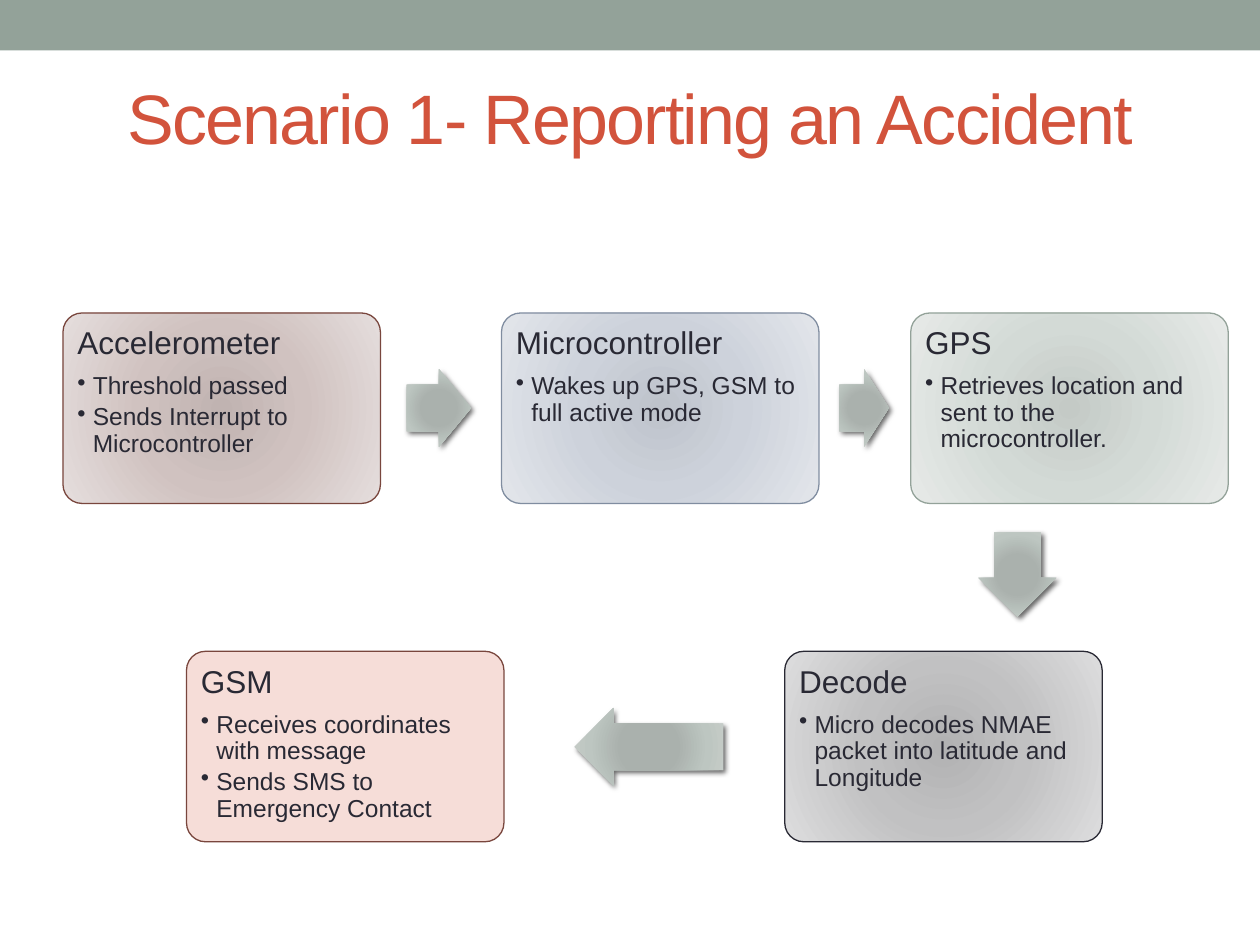
"""Builds a slide with a five-step flow for reporting an accident."""
from lxml import etree
from pptx import Presentation
from pptx import util as u
from pptx.dml.color import RGBColor
from pptx.enum import shapes, text
from pptx.oxml import ns

SAGE = RGBColor(0x93, 0xA2, 0x99)
RED = RGBColor(0xD2, 0x53, 0x3C)
INK = RGBColor(0x29, 0x29, 0x34)
BROWN = RGBColor(0x79, 0x46, 0x3D)
BLUE = RGBColor(0x80, 0x8D, 0xA0)
PINK = RGBColor(0xF6, 0xDD, 0xD8)
ROSES = [RGBColor(0xC0, 0xB3, 0xB1), RGBColor(0xD0, 0xC2, 0xC0), RGBColor(0xE5, 0xDE, 0xDD)]
BLUES = [RGBColor(0xBE, 0xC3, 0xCB), RGBColor(0xCD, 0xD2, 0xDB), RGBColor(0xE3, 0xE6, 0xEB)]
SAGES = [RGBColor(0xC4, 0xCA, 0xC6), RGBColor(0xD3, 0xDA, 0xD6), RGBColor(0xE7, 0xEA, 0xE8)]
GREYS = [RGBColor(0xB2, 0xB2, 0xB3), RGBColor(0xC1, 0xC1, 0xC2), RGBColor(0xDD, 0xDD, 0xDE)]
STEELS = [RGBColor(0xAA, 0xB2, 0xAD), RGBColor(0xAA, 0xB1, 0xAD),
          RGBColor(0xBD, 0xC6, 0xC1), RGBColor(0xC8, 0xCE, 0xCA)]


def glow(shape, hues, stops):
    shape.fill.solid()
    old = shape._element.spPr.find(ns.qn("a:solidFill"))
    grad = etree.Element(ns.qn("a:gradFill"), rotWithShape="1")
    row = etree.SubElement(grad, ns.qn("a:gsLst"))
    for hue, stop in zip(hues, stops):
        mark = etree.SubElement(row, ns.qn("a:gs"), pos=str(stop * 1000))
        etree.SubElement(mark, ns.qn("a:srgbClr"), val=str(hue))
    ring = etree.SubElement(grad, ns.qn("a:path"), path="circle")
    etree.SubElement(ring, ns.qn("a:fillToRect"), dict.fromkeys("ltrb", "100000"))
    old.getparent().replace(old, grad)


def write(para, words, size, hue):
    run = para.add_run()
    run.text = words
    run.font.name = "Arial"
    run.font.size = u.Pt(size)
    run.font.color.rgb = hue
    return run


deck = Presentation()
deck.slide_width, deck.slide_height = u.Cm(25.4), u.Cm(19.05)
slide = deck.slides.add_slide(deck.slide_layouts[6])

band = slide.shapes.add_shape(shapes.MSO_SHAPE.RECTANGLE, 0, 0, deck.slide_width, u.Cm(1.02))
band.shadow.inherit = False
band.fill.solid()
band.fill.fore_color.rgb = SAGE
band.line.fill.background()

title = slide.shapes.add_textbox(u.Cm(1.27), u.Cm(0.76), u.Cm(22.86), u.Cm(3.18))
frame = title.text_frame
frame.word_wrap = True
frame.vertical_anchor = text.MSO_ANCHOR.MIDDLE
frame.paragraphs[0].alignment = text.PP_ALIGN.CENTER
run = write(frame.paragraphs[0], "Scenario 1- Reporting an Accident", 40, RED)
run._r.get_or_add_rPr().set("spc", "-100")

TOP, LOW = 6.31, 13.13
steps = [
    (1.27, TOP, ROSES, BROWN, "Accelerometer",
     ["Threshold passed", "Sends Interrupt to Microcontroller"]),
    (10.11, TOP, BLUES, BLUE, "Microcontroller", ["Wakes up GPS, GSM to full active mode"]),
    (18.36, TOP, SAGES, SAGE, "GPS", ["Retrieves location and sent to the microcontroller."]),
    (15.82, LOW, GREYS, INK, "Decode",
     ["Micro decodes NMAE packet into latitude and Longitude"]),
    (3.76, LOW, None, BROWN, "GSM",
     ["Receives coordinates with message", "Sends SMS to Emergency Contact"]),
]
for left, top, hues, edge, head, notes in steps:
    box = slide.shapes.add_shape(shapes.MSO_SHAPE.ROUNDED_RECTANGLE,
                                 u.Cm(left), u.Cm(top), u.Cm(6.4), u.Cm(3.84))
    box.adjustments[0] = 0.1
    box.shadow.inherit = False
    if hues:
        glow(box, hues, [0, 45, 100])
    else:
        box.fill.solid()
        box.fill.fore_color.rgb = PINK
    box.line.color.rgb = edge
    box.line.width = u.Pt(0.75)
    frame = box.text_frame
    frame.word_wrap = True
    frame.vertical_anchor = text.MSO_ANCHOR.TOP
    frame.margin_left = frame.margin_right = u.Cm(0.18)
    frame.margin_top = frame.margin_bottom = u.Cm(0.18)
    for spot, words in enumerate([head] + notes):
        para = frame.add_paragraph() if spot else frame.paragraphs[0]
        para.alignment = text.PP_ALIGN.LEFT
        para.line_spacing = 0.9
        para.space_after = u.Pt(2.5 if spot else 7)
        write(para, words, 14 if spot else 18, INK)
        if spot:
            para.level = 1
            props = para._p.get_or_add_pPr()
            props.set("marL", str(u.Cm(0.31)))
            props.set("indent", str(-u.Cm(0.31)))
            etree.SubElement(props, ns.qn("a:buChar"), char="•")

arrows = [(8.2, 7.44, 1.3, 0), (16.92, 7.44, 1, 0),
          (19.66, 10.8, 1.7, 90), (11.58, 14.27, 3, 180)]
for left, top, width, turn in arrows:
    arrow = slide.shapes.add_shape(shapes.MSO_SHAPE.RIGHT_ARROW,
                                   u.Cm(left), u.Cm(top), u.Cm(width), u.Cm(1.57))
    arrow.adjustments[0] = 0.6
    arrow.rotation = turn
    arrow.line.fill.background()
    glow(arrow, STEELS, [0, 34, 70, 100])
    arrow.shadow.inherit = False
    cast = etree.SubElement(arrow._element.spPr.find(ns.qn("a:effectLst")),
                            ns.qn("a:outerShdw"), blurRad=str(u.Pt(3)), dist=str(u.Pt(2)),
                            dir="2700000", rotWithShape="0")
    shade = etree.SubElement(cast, ns.qn("a:srgbClr"), val="000000")
    etree.SubElement(shade, ns.qn("a:alpha"), val="60000")

deck.save("out.pptx")
